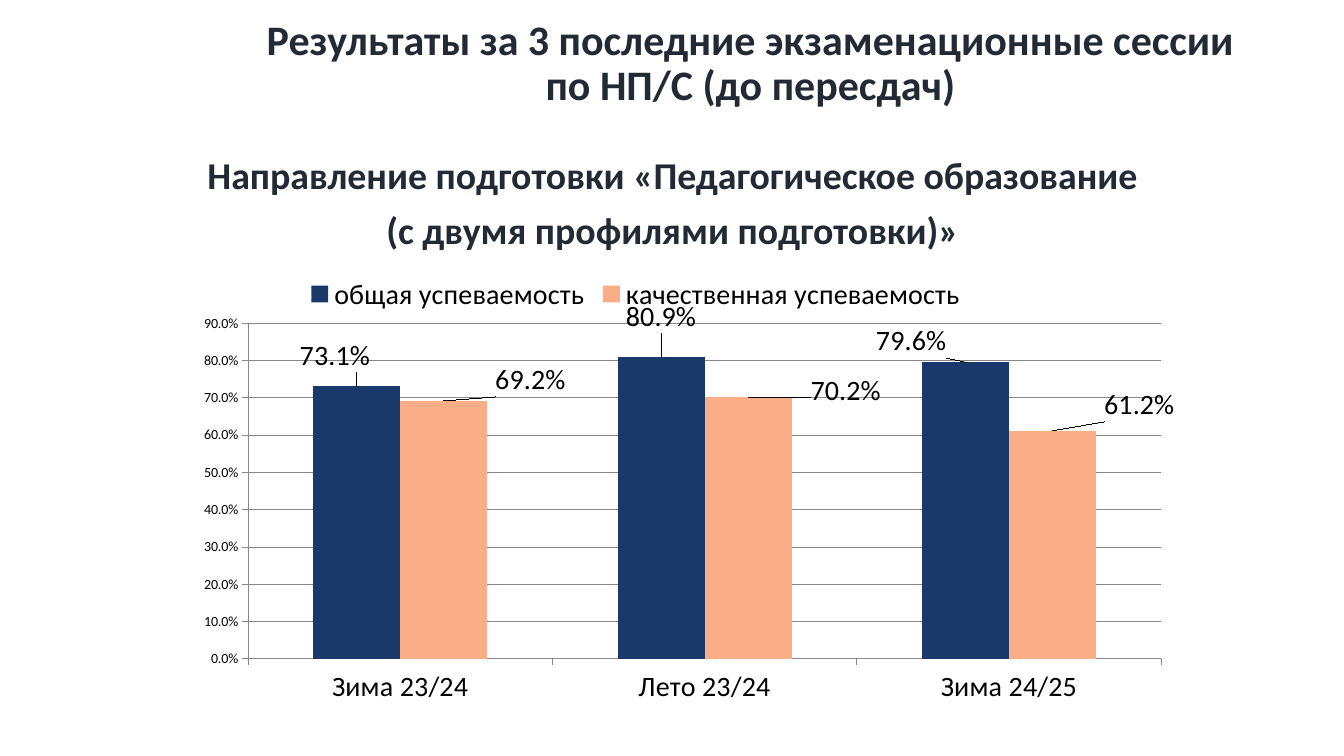
import pptx
import pptx.chart.data
import pptx.dml.color
import pptx.enum.chart
import pptx.enum.text
import pptx.oxml
import pptx.oxml.ns
import pptx.util

COLORS = {"heading": "222A35", "text": "000000", "line": "888888",
          "overall": "1A396B", "quality": "FBAD87"}
SESSIONS = ["Зима 23/24", "Лето 23/24", "Зима 24/25"]
# name, colour, values, label shifts as shares of the chart's size
RATES = [
    ("общая успеваемость", "overall", [0.731, 0.809, 0.796],
     [(-0.02, -0.02), (0, -0.04), (-0.05, 0)]),
    ("качественная успеваемость", "quality", [0.692, 0.702, 0.612],
     [(0.08, 0), (0.09, 0.03), (0.08, -0.01)]),
]
PERCENT = "0.0%"


def rgb(name):
    return pptx.dml.color.RGBColor.from_string(COLORS[name])


def manual_layout(**settings):
    """Build a c:layout element from its settings, given in schema order."""
    ns = pptx.oxml.ns.nsdecls("c")
    items = "".join(f'<c:{key} val="{value}"/>' for key, value in settings.items())
    return pptx.oxml.parse_xml(
        f"<c:layout {ns}><c:manualLayout>{items}</c:manualLayout></c:layout>")


class SessionSlide:
    font_name = "Calibri"

    def __init__(self, deck):
        self.width, self.height = deck.slide_width, deck.slide_height
        self.slide = deck.slides.add_slide(deck.slide_layouts[6])

    def place(self, left, top, width, height):
        """Turn shares of the slide into lengths."""
        return (round(left * self.width), round(top * self.height),
                round(width * self.width), round(height * self.height))

    def style(self, font, size, color="text", bold=False):
        font.name, font.size, font.bold = self.font_name, pptx.util.Pt(size), bold
        font.color.rgb = rgb(color)

    def heading(self, area, paragraphs, size, anchor, gap=0):
        """Add centred bold text; each paragraph is a list of lines."""
        frame = self.slide.shapes.add_textbox(*self.place(*area)).text_frame
        frame.word_wrap = True
        frame.vertical_anchor = anchor
        for index, lines in enumerate(paragraphs):
            paragraph = frame.add_paragraph() if index else frame.paragraphs[0]
            for number, line in enumerate(lines):
                if number:
                    paragraph.add_line_break()
                paragraph.add_run().text = line
            paragraph.alignment = pptx.enum.text.PP_ALIGN.CENTER
            paragraph.line_spacing = 0.9
            paragraph.space_before = pptx.util.Pt(gap if index else 0)
            self.style(paragraph.font, size, "heading", True)

    def line(self, line_format):
        line_format.color.rgb = rgb("line")
        line_format.width = pptx.util.Pt(0.75)

    def axis(self, axis, size):
        axis.major_tick_mark = pptx.enum.chart.XL_TICK_MARK.OUTSIDE
        axis.minor_tick_mark = pptx.enum.chart.XL_TICK_MARK.NONE
        self.style(axis.tick_labels.font, size)
        self.line(axis.format.line)

    def column_chart(self, area, categories, rates, plot_area):
        data = pptx.chart.data.CategoryChartData(number_format=PERCENT)
        data.categories = categories
        for name, _, values, _ in rates:
            data.add_series(name, values)
        chart = self.slide.shapes.add_chart(
            pptx.enum.chart.XL_CHART_TYPE.COLUMN_CLUSTERED,
            *self.place(*area), data).chart
        self.style(chart.font, 10)
        chart.has_title = False
        chart.has_legend = True
        chart.legend.position = pptx.enum.chart.XL_LEGEND_POSITION.TOP
        chart.legend.include_in_layout = False
        self.style(chart.legend.font, 20)

        self.axis(chart.category_axis, 20)
        self.axis(chart.value_axis, 10)
        chart.value_axis.minimum_scale, chart.value_axis.maximum_scale = 0, 0.9
        chart.value_axis.major_unit = 0.1
        chart.value_axis.tick_labels.number_format = PERCENT
        chart.value_axis.tick_labels.number_format_is_linked = False
        self.line(chart.value_axis.major_gridlines.format.line)

        plot = chart.plots[0]
        plot.gap_width, plot.overlap = 150, 0
        plot.vary_by_categories = False
        for series, (_, color, values, _) in zip(plot.series, rates):
            series.format.fill.solid()
            series.format.fill.fore_color.rgb = rgb(color)
            self.labels(series, len(values))
        self.shift_labels(chart, [shift for rate in rates for shift in rate[3]])
        self.fix_plot_area(chart, plot_area)

    def labels(self, series, count):
        labels = series.data_labels
        labels.show_value = True
        labels.number_format, labels.number_format_is_linked = PERCENT, False
        labels.position = pptx.enum.chart.XL_LABEL_POSITION.OUTSIDE_END
        self.style(labels.font, 20)
        for index in range(count):
            label = series.points[index].data_label
            label.position = labels.position
            self.style(label.font, 20)

    def shift_labels(self, chart, shifts):
        """Move each point's label away from its place above the column."""
        point_labels = list(chart.element.iter(pptx.oxml.ns.qn("c:dLbl")))
        for label, (x, y) in zip(point_labels, shifts):
            number_format = pptx.oxml.parse_xml(
                f'<c:numFmt {pptx.oxml.ns.nsdecls("c")} '
                f'formatCode="{PERCENT}" sourceLinked="0"/>')
            label.insert(1, manual_layout(x=x, y=y))
            label.insert(2, number_format)

    def fix_plot_area(self, chart, plot_area):
        x, y, w, h = plot_area
        area = next(chart.element.iter(pptx.oxml.ns.qn("c:plotArea")))
        for layout in area.findall(pptx.oxml.ns.qn("c:layout")):
            area.remove(layout)
        area.insert(0, manual_layout(layoutTarget="inner", xMode="edge",
                                     yMode="edge", x=x, y=y, w=w, h=h))


def main():
    deck = pptx.Presentation()
    deck.slide_width = pptx.util.Inches(13.33)
    deck.slide_height = pptx.util.Inches(7.5)
    results = SessionSlide(deck)
    anchors = pptx.enum.text.MSO_ANCHOR
    results.heading(
        (0.185, 0.013, 0.747, 0.144),
        [["Результаты за 3 последние экзаменационные сессии",
          "по НП/С (до пересдач)"]], 30, anchors.MIDDLE)
    results.heading(
        (0.069, 0.201, 0.863, 0.14),
        [["Направление подготовки «Педагогическое образование"],
         ["(с двумя профилями подготовки)»"]], 27, anchors.TOP, gap=10)
    results.column_chart((0.069, 0.349, 0.808, 0.651), SESSIONS, RATES,
                         plot_area=(0.143, 0.121, 0.841, 0.682))
    deck.save("out.pptx")


if __name__ == "__main__":
    main()
